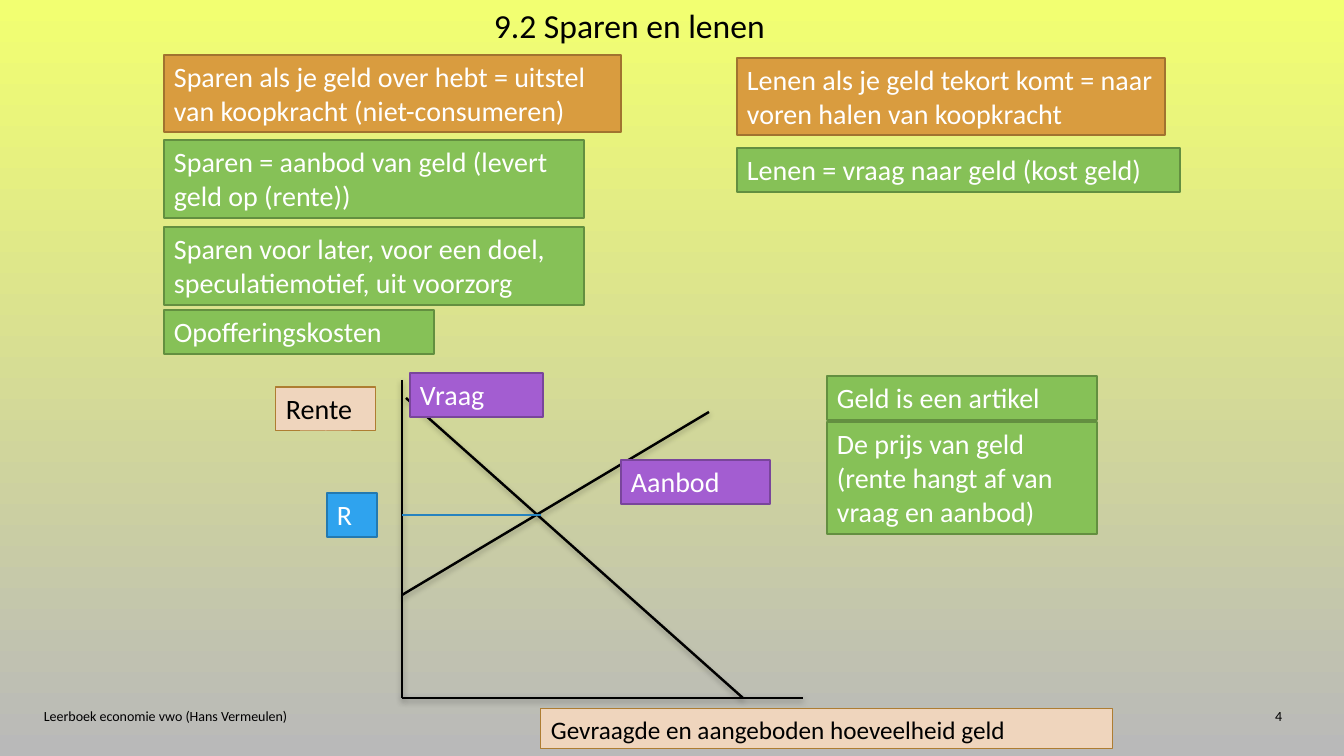
import pptx
import pptx.util
import pptx.dml.color
import pptx.enum.shapes
import pptx.enum.text
import pptx.oxml
import lxml.etree

COLOURS = {
    "sky": "F2FF71", "ground": "B9B9B9", "black": "000000", "white": "FFFFFF",
    "green": "86C157", "green edge": "638F40",
    "orange": "D99C3F", "orange edge": "A1732F",
    "purple": "A35DD1", "purple edge": "79459B",
    "blue": "2FA3EE", "blue edge": "2379B0",
    "cream": "EFD5BD", "cream edge": "AE7D32",
    "guide": "2683BF",
}

CARDS = [
    ("Lenen = vraag naar geld (kost geld)", "green", (737, 148, 443, 44)),
    ("Lenen als je geld tekort komt = naar voren halen van koopkracht", "orange", (737, 58, 428, 77)),
    ("Sparen als je geld over hebt = uitstel van koopkracht (niet-consumeren)", "orange", (164, 55, 457, 77)),
    ("Sparen = aanbod van geld (levert geld op (rente))", "green", (164, 140, 420, 78)),
    ("Sparen voor later, voor een doel, speculatiemotief, uit voorzorg", "green", (164, 227, 420, 78)),
    ("Opofferingskosten", "green", (164, 310, 270, 44)),
    ("Geld is een artikel", "green", (827, 376, 270, 44)),
    ("De prijs van geld (rente hangt af van vraag en aanbod)", "green", (827, 422, 270, 112)),
    ("Vraag", "purple", (410, 373, 133, 44)),
    ("Aanbod", "purple", (621, 460, 149, 44)),
    ("R", "blue", (327, 493, 50, 44)),
]
AXIS_LABELS = [
    ("Rente", 20, (276, 387, 100, 44)),
    ("Gevraagde en aangeboden hoeveelheid geld", 18, (541, 709, 572, 40)),
]

AXIS_LEFT, AXIS_TOP, AXIS_RIGHT, AXIS_BOTTOM = 402, 380, 803, 698
BALANCE_X, BALANCE_Y = 541, 515
CURVES = [
    (AXIS_LEFT, AXIS_TOP, AXIS_LEFT, AXIS_BOTTOM),
    (AXIS_RIGHT, AXIS_BOTTOM, AXIS_LEFT, AXIS_BOTTOM),
    (406, 398, 743, AXIS_BOTTOM),
    (709, 412, AXIS_LEFT, 595),
]

SCALE = 12192000 / 1344
NAMESPACE = "http://schemas.openxmlformats.org/drawingml/2006/main"
SHADOW = (
    '<a:outerShdw blurRad="50800" dist="25400" dir="5400000" rotWithShape="0">'
    '<a:srgbClr val="000000"><a:alpha val="28000"/></a:srgbClr></a:outerShdw>'
)


def px(*lengths):
    return [pptx.util.Emu(round(length * SCALE)) for length in lengths]


def colour(name):
    return pptx.dml.color.RGBColor.from_string(COLOURS[name])


def add_text(page, text, place, size=20, ink="black", fill=None, edge_width=1.25,
             align="LEFT", anchor="TOP"):
    if fill:
        box = page.shapes.add_shape(pptx.enum.shapes.MSO_SHAPE.RECTANGLE, *px(*place))
        box.shadow.inherit = False
        box.fill.solid()
        box.fill.fore_color.rgb = colour(fill)
        box.line.color.rgb = colour(fill + " edge")
        box.line.width = pptx.util.Pt(edge_width)
    else:
        box = page.shapes.add_textbox(*px(*place))
    frame = box.text_frame
    frame.word_wrap = True
    frame.vertical_anchor = pptx.enum.text.MSO_ANCHOR[anchor]
    para = frame.paragraphs[0]
    para.alignment = pptx.enum.text.PP_ALIGN[align]
    span = para.add_run()
    span.text = text
    span.font.name = "Calibri"
    span.font.size = pptx.util.Pt(size)
    span.font.color.rgb = colour(ink)


def add_line(page, ends, ink="black", width=1.75, shadow=SHADOW):
    line = page.shapes.add_connector(pptx.enum.shapes.MSO_CONNECTOR.STRAIGHT, *px(*ends))
    line.line.color.rgb = colour(ink)
    line.line.width = pptx.util.Pt(width)
    effects = f'<a:effectLst xmlns:a="{NAMESPACE}">{shadow}</a:effectLst>'
    line._element.spPr.append(pptx.oxml.parse_xml(effects))


def main():
    deck = pptx.Presentation()
    deck.slide_width, deck.slide_height = px(1344, 756)
    page = deck.slides.add_slide(deck.slide_layouts[6])

    backdrop = page.background.fill
    backdrop.gradient()
    backdrop.gradient_angle = 270
    for stop, name in zip(backdrop.gradient_stops, ("sky", "ground")):
        stop.color.rgb = colour(name)

    add_text(page, "Leerboek economie vwo (Hans Vermeulen)", (34, 696, 736, 40), size=10, anchor="MIDDLE")
    add_text(page, "4", (1208, 696, 84, 40), size=10, align="RIGHT", anchor="MIDDLE")
    for ends in CURVES:
        add_line(page, ends)
    add_line(page, (BALANCE_X, BALANCE_Y, AXIS_LEFT, BALANCE_Y), ink="guide", width=0.75, shadow="")
    for text, size, place in AXIS_LABELS:
        add_text(page, text, place, size=size, fill="cream", edge_width=0.75)
    for text, fill, place in CARDS:
        add_text(page, text, place, ink="white", fill=fill)
    add_text(page, "9.2 Sparen en lenen", (484, 0, 415, 50), size=24)

    deck.save("out.pptx")


if __name__ == "__main__":
    main()
